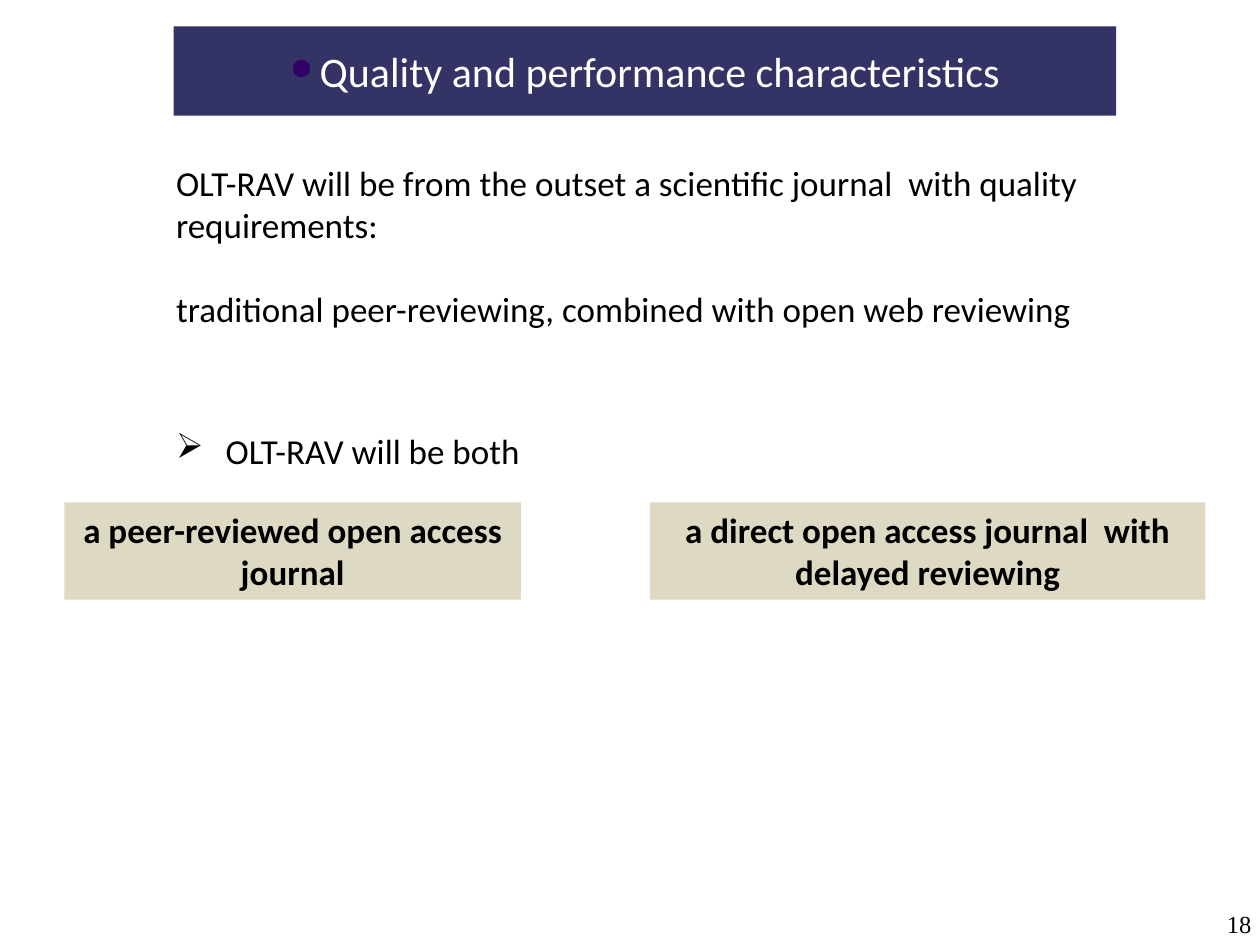
from dataclasses import dataclass

from lxml import etree
from pptx import Presentation
from pptx import util as u
from pptx.dml.color import RGBColor
from pptx.enum import shapes, text
from pptx.oxml.ns import qn

HUES = {"navy": "333366", "plum": "330066", "sand": "DDD9C3",
        "black": "000000", "white": "FFFFFF"}
LEFT, MID, RIGHT = text.PP_ALIGN.LEFT, text.PP_ALIGN.CENTER, text.PP_ALIGN.RIGHT


@dataclass
class Card:
    words: str
    left: float
    width: float


CARDS = [
    Card("a peer-reviewed open access journal", 1.3, 9.2),
    Card("a direct open access journal  with delayed reviewing", 13.1, 11.2),
]


def tint(name: str) -> RGBColor:
    return RGBColor.from_string(HUES[name])


def paint(shape, hue: str) -> None:
    shape.shadow.inherit = False
    shape.fill.solid()
    shape.fill.fore_color.rgb = tint(hue)
    shape.line.fill.background()


def write(shape, *lines: str, size: float = 20, font: str = "Calibri",
          hue: str = "black", bold: bool = False, align=LEFT,
          anchor=text.MSO_ANCHOR.TOP, before: float = 0, after: float = 0) -> None:
    frame = shape.text_frame
    frame.word_wrap = True
    frame.auto_size = text.MSO_AUTO_SIZE.NONE
    frame.vertical_anchor = anchor
    for i, line in enumerate(lines):
        par = frame.add_paragraph() if i else frame.paragraphs[0]
        par.alignment = align
        par.space_before, par.space_after = u.Pt(before), u.Pt(after)
        run = par.add_run()
        run.text = line
        run.font.size, run.font.name, run.font.bold = u.Pt(size), font, bold
        run.font.color.rgb = tint(hue)


def mark(shape, sign: str, indent: float, hue: str, scale: int = 100) -> None:
    """Give the first paragraph a hanging bullet."""
    props = shape.text_frame.paragraphs[0]._p.get_or_add_pPr()
    props.set("marL", str(u.Cm(indent)))
    props.set("indent", str(-u.Cm(indent)))
    color = etree.SubElement(props, qn("a:buClr"))
    etree.SubElement(color, qn("a:srgbClr"), val=HUES[hue])
    etree.SubElement(props, qn("a:buSzPct"), val=str(scale * 1000))
    etree.SubElement(props, qn("a:buChar"), char=sign)


def box(slide, left: float, top: float, width: float, height: float):
    return slide.shapes.add_textbox(u.Cm(left), u.Cm(top), u.Cm(width), u.Cm(height))


def main() -> None:
    deck = Presentation()
    deck.slide_width, deck.slide_height = u.Cm(25.4), u.Cm(19.05)
    slide = deck.slides.add_slide(deck.slide_layouts[5])

    # Title bar
    title = slide.shapes.title
    title.left, title.top = u.Cm(3.5), u.Cm(0.53)
    title.width, title.height = u.Cm(19), u.Cm(1.8)
    paint(title, "navy")
    write(title, "Quality and performance characteristics", size=24, hue="white",
          align=MID, anchor=text.MSO_ANCHOR.MIDDLE, before=7)
    mark(title, "●", 0.6, "plum", 70)

    # Requirements
    write(box(slide, 3.3, 3.13, 21.03, 4.52),
          "OLT-RAV will be from the outset a scientific journal  with quality requirements:",
          "traditional peer-reviewing, combined with open web reviewing", after=24)

    # Lead-in to the two kinds of journal
    lead = box(slide, 3.3, 8.53, 19.8, 1.1)
    write(lead, "OLT-RAV will be both")
    mark(lead, "➢", 1, "black")

    # Journal cards
    for card in CARDS:
        rect = slide.shapes.add_shape(shapes.MSO_SHAPE.RECTANGLE, u.Cm(card.left),
                                      u.Cm(10.13), u.Cm(card.width), u.Cm(1.96))
        paint(rect, "sand")
        write(rect, card.words, bold=True, align=MID)

    # Page number
    page = box(slide, 23.5, 18.32, 1.73, 0.7)
    frame = page.text_frame
    frame.margin_left = frame.margin_right = frame.margin_top = frame.margin_bottom = 0
    write(page, "18", size=14, font="Times New Roman", align=RIGHT)

    deck.save("out.pptx")


if __name__ == "__main__":
    main()
